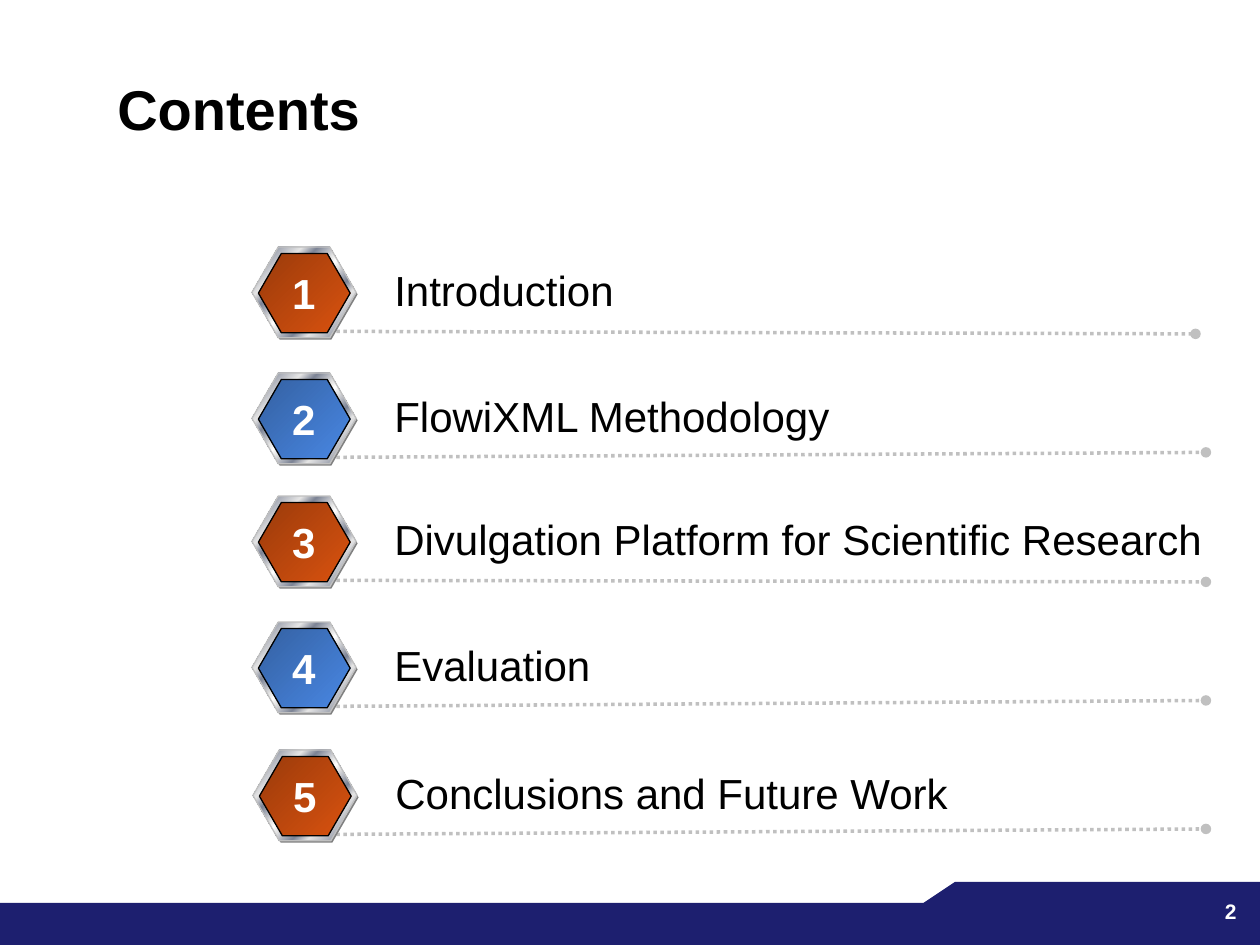
from dataclasses import dataclass

from lxml import etree
from pptx import Presentation
from pptx import util as u
from pptx.dml.color import RGBColor
from pptx.enum import dml, shapes, text
from pptx.oxml import ns

NAVY = RGBColor(0x1D, 0x1F, 0x6F)
BLACK = RGBColor(0, 0, 0)
WHITE = RGBColor(0xFF, 0xFF, 0xFF)
SILVER = RGBColor(0xC0, 0xC0, 0xC0)
GRAY = RGBColor(0x80, 0x80, 0x80)
LIGHT = RGBColor(0xE6, 0xE6, 0xE6)
STEEL = RGBColor(0x7D, 0x84, 0x96)
RUST = RGBColor(0x9B, 0x3B, 0x0B)
ORANGE = RGBColor(0xD9, 0x52, 0x0F)
DENIM = RGBColor(0x34, 0x61, 0xA2)
BLUE = RGBColor(0x49, 0x87, 0xE3)

Stops = list[tuple[int, RGBColor]]
METAL: Stops = [
    (0, LIGHT), (7, STEEL), (26, LIGHT), (34, STEEL), (46, LIGHT), (50, WHITE),
    (54, LIGHT), (66, STEEL), (74, LIGHT), (93, STEEL), (100, LIGHT),
]
WARM: Stops = [(0, RUST), (100, ORANGE)]
COOL: Stops = [(0, DENIM), (100, BLUE)]


@dataclass
class Entry:
    label: str
    width: float
    top: float
    end_x: float
    end_y: float
    left: float = 5.08


ENTRIES = [
    Entry("Introduction", 4.98, 4.98, 24.1, 6.73),
    Entry("FlowiXML Methodology", 9.37, 7.52, 24.31, 9.12),
    Entry("Divulgation Platform for Scientific Research", 16.97, 10, 24.31, 11.73),
    Entry("Evaluation", 4.52, 12.54, 24.31, 14.12),
    Entry("Conclusions and Future Work", 11.76, 15.12, 24.31, 16.71, 5.1),
]


def write(sp, content: str, *, size: float = 24, bold: bool = False,
          color: RGBColor = BLACK, align=text.PP_ALIGN.LEFT,
          anchor=text.MSO_ANCHOR.TOP, wrap: bool = False) -> None:
    tf = sp.text_frame
    tf.word_wrap = wrap
    tf.auto_size = text.MSO_AUTO_SIZE.NONE if wrap else text.MSO_AUTO_SIZE.SHAPE_TO_FIT_TEXT
    tf.vertical_anchor = anchor
    p = tf.paragraphs[0]
    p.alignment = align
    r = p.add_run()
    r.text = content
    r.font.name = "Arial"
    r.font.size = u.Pt(size)
    r.font.bold = bold
    r.font.color.rgb = color


def add_text(s, left: float, top: float, width: float, height: float,
             content: str, **style) -> None:
    sp = s.shapes.add_textbox(u.Cm(left), u.Cm(top), u.Cm(width), u.Cm(height))
    write(sp, content, **style)


def paint(sp, color: RGBColor) -> None:
    sp.fill.solid()
    sp.fill.fore_color.rgb = color
    sp.line.fill.background()
    sp.shadow.inherit = False


def shade(sp, stops: Stops) -> None:
    sp.fill.gradient()
    sp.fill.gradient_angle = 315
    gs_list = sp._element.spPr.find(".//" + ns.qn("a:gsLst"))
    for gs in list(gs_list):
        gs_list.remove(gs)
    for position, color in stops:
        gs = etree.SubElement(gs_list, ns.qn("a:gs"), pos=str(position * 1000))
        etree.SubElement(gs, ns.qn("a:srgbClr"), val=str(color))


def add_hexagon(group, left: float, top: float, width: float, height: float):
    sp = group.shapes.add_shape(shapes.MSO_SHAPE.HEXAGON, u.Cm(left), u.Cm(top),
                                u.Cm(width), u.Cm(height))
    sp.adjustments[0] = 0.29
    paint(sp, GRAY)
    return sp


def add_badge(s, left: float, top: float, core: Stops) -> None:
    group = s.shapes.add_group_shape()
    add_hexagon(group, left + 0.03, top + 0.04, 2.1, 1.83)
    for inset, width, height, stops, outline in (
        (0, 2.1, 1.83, METAL, SILVER),
        (0.13, 1.85, 1.6, core, BLACK),
    ):
        sp = add_hexagon(group, left + inset, top + inset, width, height)
        shade(sp, stops)
        sp.line.color.rgb = outline
        sp.line.width = u.Pt(0.75)


def add_leader(s, x1: float, y1: float, x2: float, y2: float) -> None:
    line = s.shapes.add_connector(shapes.MSO_CONNECTOR.STRAIGHT,
                                  u.Cm(x1), u.Cm(y1), u.Cm(x2), u.Cm(y2))
    line.line.color.rgb = SILVER
    line.line.width = u.Pt(2)
    line.line.dash_style = dml.MSO_LINE.ROUND_DOT
    etree.SubElement(line.line._get_or_add_ln(), ns.qn("a:tailEnd"), type="oval")
    etree.SubElement(line._element.spPr, ns.qn("a:effectLst"))


def add_footer(s) -> None:
    band = s.shapes.add_shape(shapes.MSO_SHAPE.RECTANGLE, 0, u.Cm(18.2),
                              u.Cm(25.4), u.Cm(0.85))
    paint(band, NAVY)
    outline = [(18.62, 18.2), (19.25, 17.78), (25.4, 17.78), (25.4, 18.42), (18.62, 18.42)]
    points = [(u.Cm(x), u.Cm(y)) for x, y in outline]
    builder = s.shapes.build_freeform(*points[0])
    builder.add_line_segments(points[1:], close=True)
    paint(builder.convert_to_shape(), NAVY)
    add_text(s, 19.89, 17.98, 5.29, 0.64, "2", size=12, bold=True, color=WHITE,
             align=text.PP_ALIGN.RIGHT, wrap=True)


def add_title(s, content: str) -> None:
    sp = s.shapes.title
    sp.left, sp.top, sp.width, sp.height = u.Cm(2.11), u.Cm(1.4), u.Cm(21.79), u.Cm(1.57)
    write(sp, content, size=32, bold=True, anchor=text.MSO_ANCHOR.MIDDLE, wrap=True)


def add_entry(s, number: int, entry: Entry) -> None:
    add_leader(s, 6.78, entry.top + 1.7, entry.end_x, entry.end_y)
    add_badge(s, entry.left, entry.top, WARM if number % 2 else COOL)
    add_text(s, entry.left + 2.62, entry.top + 0.22, entry.width, 1.27, entry.label)
    add_text(s, entry.left + 0.55, entry.top + 0.28, 0.99, 1.27, str(number),
             bold=True, color=WHITE, align=text.PP_ALIGN.CENTER)


def main() -> None:
    prs = Presentation()
    prs.slide_width, prs.slide_height = u.Cm(25.4), u.Cm(19.05)
    s = prs.slides.add_slide(prs.slide_layouts[5])
    add_footer(s)
    add_title(s, "Contents")
    for number, entry in enumerate(ENTRIES, 1):
        add_entry(s, number, entry)
    prs.save("out.pptx")


if __name__ == "__main__":
    main()
